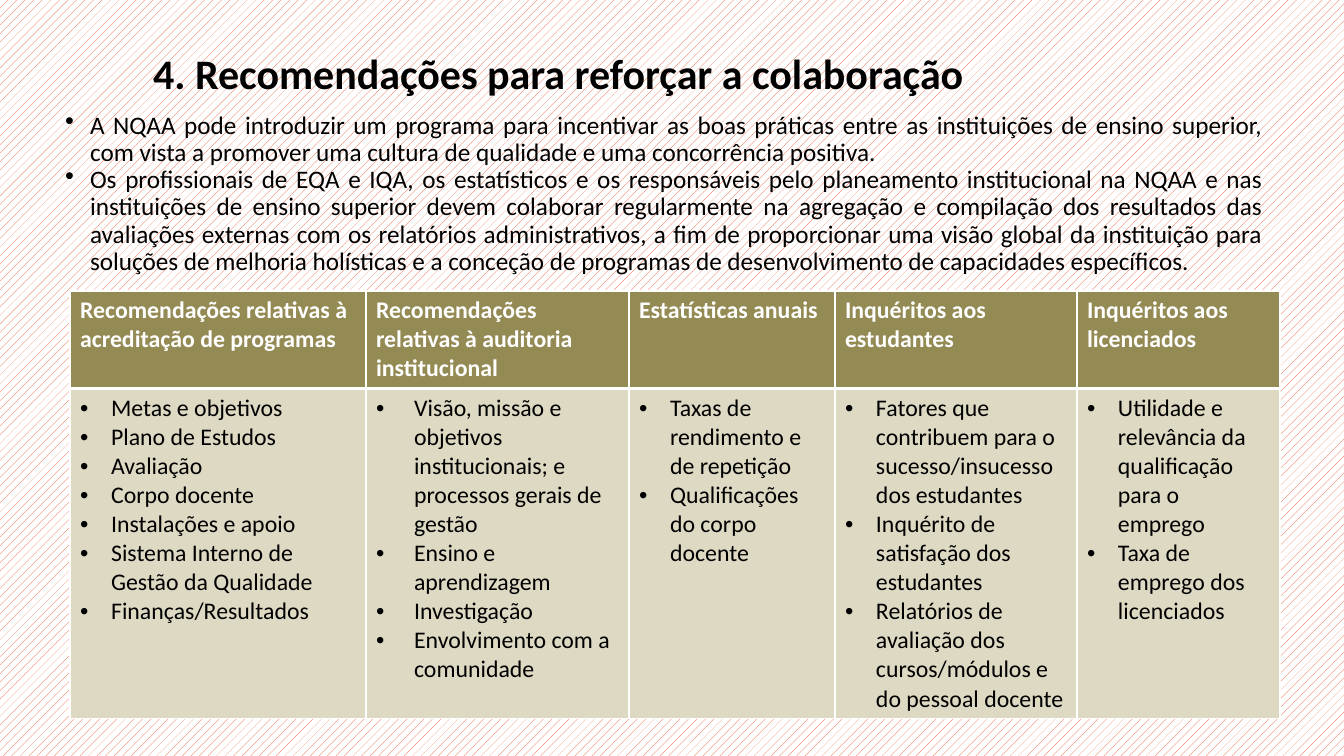
from lxml.etree import SubElement
from pptx import Presentation
from pptx.dml.color import RGBColor
from pptx.enum.dml import MSO_PATTERN
from pptx.enum.text import MSO_ANCHOR, MSO_AUTO_SIZE, PP_ALIGN
from pptx.oxml.ns import qn
from pptx.util import Emu, Pt

COLORS = {
    "text": "000000",
    "white": "FFFFFF",
    "hatch": "E84C22",
    "header": "948A54",
    "body": "DDD9C3",
}
EMU_PER_PX = 914400 / 100.8

TITLE = "4. Recomendações para reforçar a colaboração"
RECOMMENDATIONS = [
    "A NQAA pode introduzir um programa para incentivar as boas práticas entre as "
    "instituições de ensino superior, com vista a promover uma cultura de qualidade "
    "e uma concorrência positiva.",
    "Os profissionais de EQA e IQA, os estatísticos e os responsáveis pelo planeamento "
    "institucional na NQAA e nas instituições de ensino superior devem colaborar "
    "regularmente na agregação e compilação dos resultados das avaliações externas com "
    "os relatórios administrativos, a fim de proporcionar uma visão global da "
    "instituição para soluções de melhoria holísticas e a conceção de programas de "
    "desenvolvimento de capacidades específicos.",
]
# Each column: width, bullet indent, heading, items
SOURCES = [
    (296, 31, "Recomendações relativas à acreditação de programas",
     ["Metas e objetivos", "Plano de Estudos", "Avaliação", "Corpo docente",
      "Instalações e apoio", "Sistema Interno de Gestão da Qualidade",
      "Finanças/Resultados"]),
    (263, 38, "Recomendações relativas à auditoria institucional",
     ["Visão, missão e objetivos institucionais; e processos gerais de gestão",
      "Ensino e aprendizagem", "Investigação", "Envolvimento com a comunidade"]),
    (206, 31, "Estatísticas anuais",
     ["Taxas de rendimento e de repetição", "Qualificações do corpo docente"]),
    (242, 31, "Inquéritos aos estudantes",
     ["Fatores que contribuem para o sucesso/insucesso dos estudantes",
      "Inquérito de satisfação dos estudantes",
      "Relatórios de avaliação dos cursos/módulos e do pessoal docente"]),
    (203, 31, "Inquéritos aos licenciados",
     ["Utilidade e relevância da qualificação para o emprego",
      "Taxa de emprego dos licenciados"]),
]


def px(length):
    return Emu(round(length * EMU_PER_PX))


def color(name):
    return RGBColor.from_string(COLORS[name])


class SlideBuilder:
    def __init__(self, presentation, font_name):
        self.font_name = font_name
        self.slide = presentation.slides.add_slide(presentation.slide_layouts[1])

    def background(self):
        fill = self.slide.background.fill
        fill.patterned()
        fill.pattern = MSO_PATTERN.PERCENT_20
        fill.fore_color.rgb = color("hatch")
        fill.back_color.rgb = color("white")

    def place(self, shape, left, top, width, height):
        shape.left, shape.top = px(left), px(top)
        shape.width, shape.height = px(width), px(height)

    def set_lines(self, text_frame, lines, size, color_name="text", bold=False,
                  align=PP_ALIGN.LEFT, margin=0, bullet_indent=0):
        """Fill a text frame with one paragraph per line, bulleted if indented."""
        text_frame.text = "\n".join(lines)
        for paragraph in text_frame.paragraphs:
            paragraph.alignment = align
            paragraph.space_before = Pt(0)
            properties = paragraph._p.get_or_add_pPr()
            properties.set("marL", str(px(margin + bullet_indent)))
            properties.set("indent", str(-px(bullet_indent)))
            if bullet_indent:
                SubElement(properties, qn("a:buFont"), typeface="Arial")
                SubElement(properties, qn("a:buChar"), char="•")
            for run in paragraph.runs:
                run.font.name = self.font_name
                run.font.size = Pt(size)
                run.font.bold = bold
                run.font.color.rgb = color(color_name)

    def title(self, text, box):
        shape = self.slide.shapes.title
        self.place(shape, *box)
        shape.text_frame.auto_size = MSO_AUTO_SIZE.NONE
        shape.text_frame.vertical_anchor = MSO_ANCHOR.TOP
        self.set_lines(shape.text_frame, [text], 30, bold=True, margin=50)

    def bullets(self, lines, box):
        shape = self.slide.placeholders[1]
        self.place(shape, *box)
        shape.text_frame.auto_size = MSO_AUTO_SIZE.TEXT_TO_FIT_SHAPE
        self.set_lines(shape.text_frame, lines, 18, align=PP_ALIGN.JUSTIFY,
                       bullet_indent=25)

    def cell_style(self, cell, fill_name, **border_points):
        properties = cell._tc.get_or_add_tcPr()
        for side in ("L", "R", "T", "B"):
            line = SubElement(properties, qn(f"a:ln{side}"),
                              w=str(Pt(border_points.get(side, 1))))
            fill = SubElement(line, qn("a:solidFill"))
            SubElement(fill, qn("a:srgbClr"), val=COLORS["white"])
        cell.fill.solid()
        cell.fill.fore_color.rgb = color(fill_name)

    def table(self, columns, left, top, row_heights):
        width = sum(column[0] for column in columns)
        table = self.slide.shapes.add_table(
            len(row_heights), len(columns), px(left), px(top),
            px(width), px(sum(row_heights))).table
        for row, height in zip(table.rows, row_heights):
            row.height = px(height)
        for index, (column_width, indent, heading, items) in enumerate(columns):
            table.columns[index].width = px(column_width)
            header, body = table.cell(0, index), table.cell(1, index)
            self.cell_style(header, "header", B=3)
            self.cell_style(body, "body", T=3)
            self.set_lines(header.text_frame, [heading], 17, "white", bold=True)
            self.set_lines(body.text_frame, items, 17, bullet_indent=indent)


def main():
    presentation = Presentation()
    presentation.slide_width, presentation.slide_height = px(1344), px(756)
    builder = SlideBuilder(presentation, "Calibri")
    builder.background()
    builder.title(TITLE, (93, 42, 1159, 50))
    builder.table(SOURCES, 70, 291, (97, 330))
    builder.bullets(RECOMMENDATIONS, (55, 104, 1218, 187))
    presentation.save("out.pptx")


if __name__ == "__main__":
    main()
